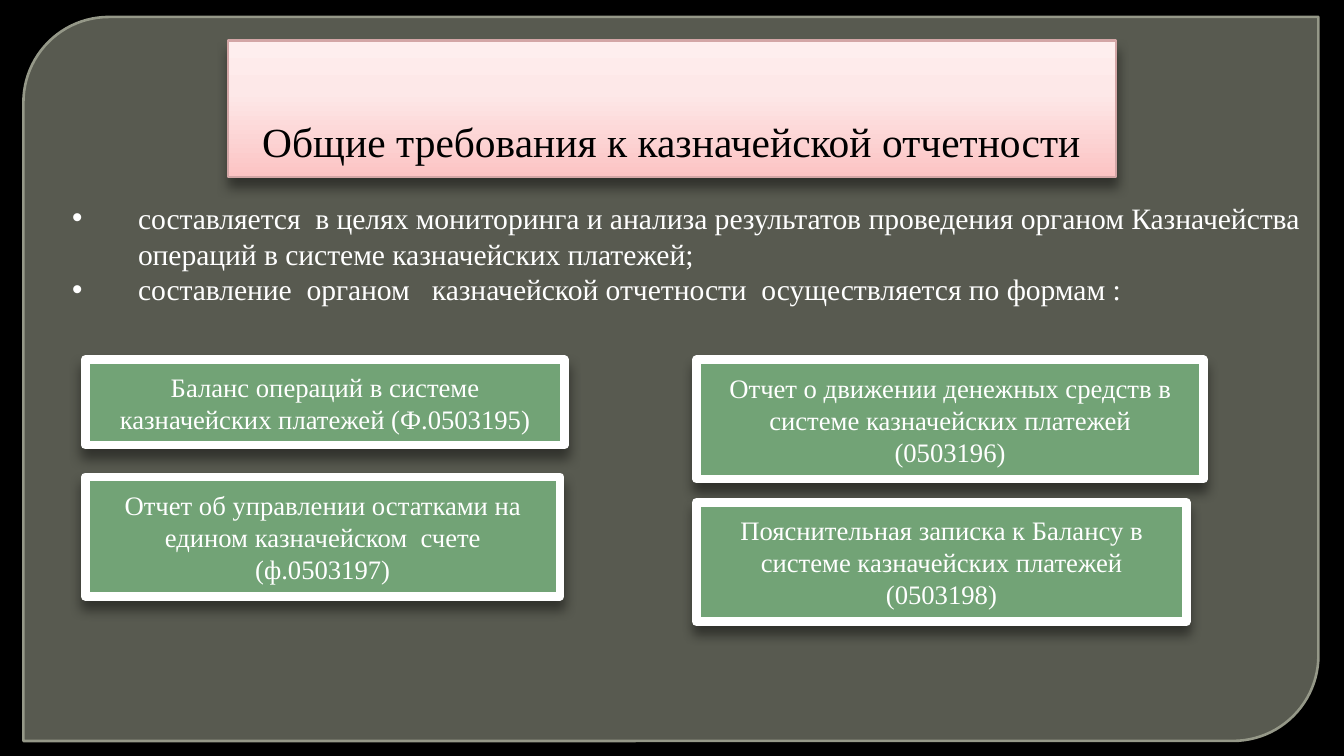
from copy import deepcopy
from dataclasses import dataclass

from pptx import Presentation
from pptx.dml.color import RGBColor
from pptx.enum.shapes import MSO_SHAPE
from pptx.enum.text import MSO_ANCHOR, PP_ALIGN
from pptx.oxml import parse_xml
from pptx.oxml.ns import nsdecls
from pptx.shapes.autoshape import Shape
from pptx.slide import Slide
from pptx.text.text import TextFrame
from pptx.util import Inches, Pt

BLACK = RGBColor(0x00, 0x00, 0x00)
WHITE = RGBColor(0xFF, 0xFF, 0xFF)
OLIVE = RGBColor(0x58, 0x5A, 0x50)
EDGE = RGBColor(0x95, 0x98, 0x88)
GREEN = RGBColor(0x72, 0xA3, 0x76)
ROSE = RGBColor(0xD3, 0xA6, 0xA6)
BLUSH = (
    (0, RGBColor(0xFC, 0xC4, 0xC4)),
    (0.62, RGBColor(0xFD, 0xE8, 0xE8)),
    (1, RGBColor(0xFE, 0xEE, 0xEE)),
)
FONT = "Times New Roman"
TITLE = "Общие требования к казначейской отчетности"
POINTS = (
    "составляется  в целях мониторинга и анализа результатов проведения "
    "органом Казначейства операций в системе казначейских платежей;",
    "составление  органом   казначейской отчетности  осуществляется по формам :",
)


@dataclass
class Box:
    left: float
    top: float
    width: float
    height: float


@dataclass
class Form:
    box: Box
    text: str


LEFT, RIGHT = 0.4, 3.27
FORMS = (
    Form(Box(LEFT, 1.69, 2.25, 0.4),
         "Баланс операций в системе казначейских платежей (Ф.0503195)"),
    Form(Box(RIGHT, 1.69, 2.38, 0.56),
         "Отчет о движении денежных средств в системе казначейских платежей (0503196)"),
    Form(Box(LEFT, 2.24, 2.23, 0.56),
         "Отчет об управлении остатками на едином казначейском  счете (ф.0503197)"),
    Form(Box(RIGHT, 2.36, 2.3, 0.56),
         "Пояснительная записка к Балансу в системе казначейских платежей (0503198)"),
)


def place(box: Box) -> tuple:
    return tuple(map(Inches, (box.left, box.top, box.width, box.height)))


def add_box(slide: Slide, kind: MSO_SHAPE, box: Box, fill: RGBColor,
            line: RGBColor, width: float) -> Shape:
    shape = slide.shapes.add_shape(kind, *place(box))
    shape.shadow.inherit = False
    shape.fill.solid()
    shape.fill.fore_color.rgb = fill
    shape.line.color.rgb = line
    shape.line.width = Pt(width)
    return shape


def add_shade(shape: Shape) -> None:
    effect = shape._element.spPr.find(
        "{http://schemas.openxmlformats.org/drawingml/2006/main}effectLst")
    effect.append(parse_xml(
        f'<a:outerShdw {nsdecls("a")} blurRad="{Pt(4)}" dist="{Pt(3)}" '
        'dir="5400000" rotWithShape="0"><a:srgbClr val="000000">'
        '<a:alpha val="43000"/></a:srgbClr></a:outerShdw>'))


def add_blend(shape: Shape) -> None:
    fill = shape.fill
    fill.gradient()
    fill.gradient_angle = 90
    first = fill.gradient_stops[0]._gs
    first.addnext(deepcopy(first))
    for stop, (place_at, color) in zip(fill.gradient_stops, BLUSH):
        stop.position = place_at
        stop.color.rgb = color


def set_text(frame: TextFrame, text: str, size: float, color: RGBColor,
             align: PP_ALIGN, anchor: MSO_ANCHOR) -> None:
    frame.text = text
    frame.word_wrap = True
    frame.vertical_anchor = anchor
    for para in frame.paragraphs:
        para.alignment = align
        for run in para.runs:
            run.font.name = FONT
            run.font.size = Pt(size)
            run.font.color.rgb = color


def add_title(slide: Slide) -> None:
    shape = add_box(slide, MSO_SHAPE.RECTANGLE, Box(1.07, 0.19, 4.17, 0.64),
                    WHITE, ROSE, 0.75)
    add_blend(shape)
    add_shade(shape)
    frame = shape.text_frame
    set_text(frame, TITLE, 14, BLACK, PP_ALIGN.CENTER, MSO_ANCHOR.BOTTOM)
    frame.paragraphs[0].line_spacing = Pt(17.5)


def add_points(slide: Slide) -> None:
    frame = slide.shapes.add_textbox(*place(Box(0.24, 0.89, 6.07, 0.61))).text_frame
    set_text(frame, "\n".join(POINTS), 10, WHITE, PP_ALIGN.LEFT, MSO_ANCHOR.TOP)
    for para in frame.paragraphs:
        props = para._p.get_or_add_pPr()
        props.set("marL", str(Inches(0.31)))
        props.set("indent", str(-Inches(0.31)))
        props.append(parse_xml(f'<a:buFont {nsdecls("a")} typeface="Arial"/>'))
        props.append(parse_xml(f'<a:buChar {nsdecls("a")} char="•"/>'))


def add_form(slide: Slide, form: Form) -> None:
    shape = add_box(slide, MSO_SHAPE.RECTANGLE, form.box, GREEN, WHITE, 3)
    add_shade(shape)
    set_text(shape.text_frame, form.text, 9, WHITE, PP_ALIGN.CENTER, MSO_ANCHOR.MIDDLE)


def main() -> None:
    deck = Presentation()
    deck.slide_width = Inches(6.31)
    deck.slide_height = Inches(3.55)
    slide = deck.slides.add_slide(deck.slide_layouts[6])
    slide.background.fill.solid()
    slide.background.fill.fore_color.rgb = BLACK
    panel = add_box(slide, MSO_SHAPE.ROUND_2_DIAG_RECTANGLE,
                    Box(0.11, 0.08, 6.08, 3.4), OLIVE, EDGE, 0.87)
    panel.adjustments[0] = 0.118
    panel.adjustments[1] = 0
    add_title(slide)
    add_points(slide)
    for form in FORMS:
        add_form(slide, form)
    deck.save("out.pptx")


if __name__ == "__main__":
    main()
